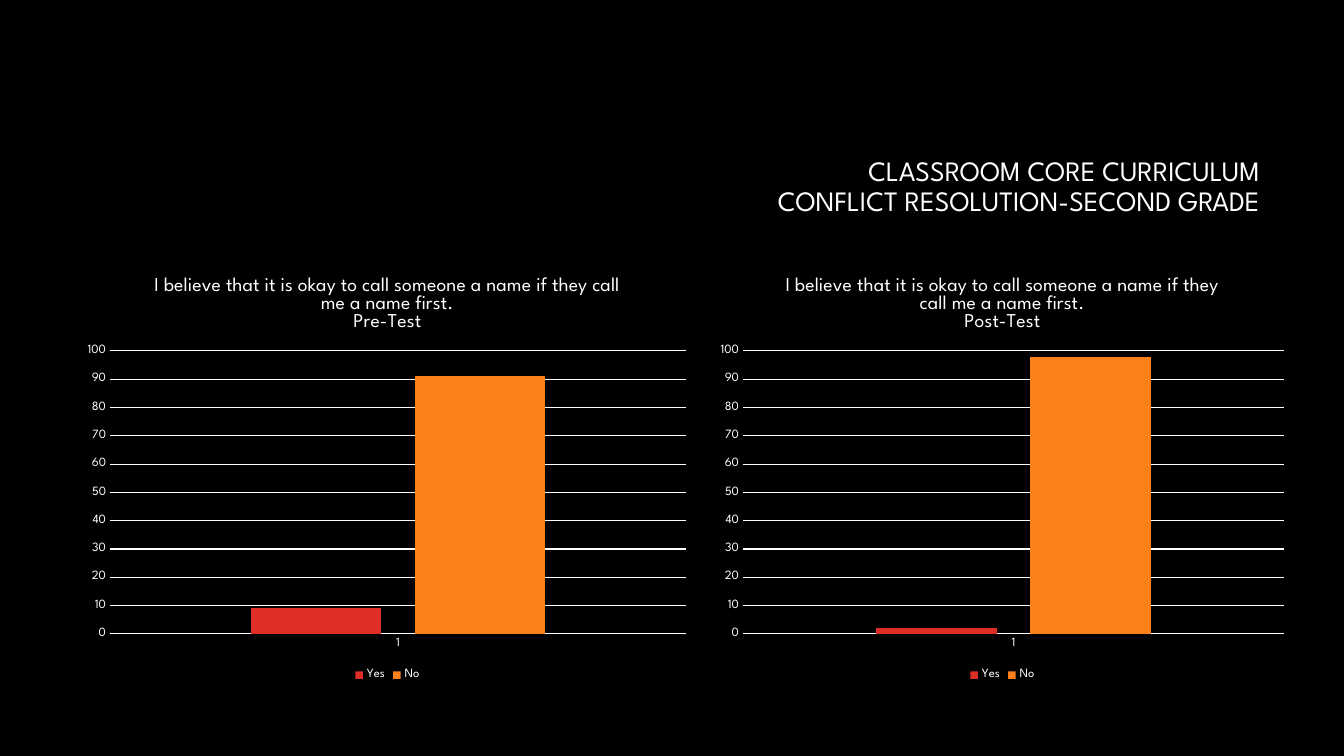
"""Build the conflict resolution slide with its pre-test and post-test charts."""
import pptx
import pptx.chart.data
import pptx.dml.color
import pptx.enum.chart
import pptx.enum.text
import pptx.oxml
import pptx.oxml.ns
import pptx.util

PX = 9071
FONT = "League Spartan"
BLACK = pptx.dml.color.RGBColor(0x00, 0x00, 0x00)
WHITE = pptx.dml.color.RGBColor(0xFF, 0xFF, 0xFF)
RED = pptx.dml.color.RGBColor(0xDF, 0x2E, 0x28)
ORANGE = pptx.dml.color.RGBColor(0xFE, 0x80, 0x1A)
QUESTION = "I believe that it is okay to call someone a name if they call me a name first."
CHART_TOP, CHART_HEIGHT = 259, 426
PLOT_TOP, PLOT_HEIGHT = 351, 283


def style(font, size):
    font.name = FONT
    font.size = pptx.util.Pt(size)
    font.bold = False
    font.color.rgb = WHITE


def place_plot(chart, x, y, w, h):
    area = chart.element.find(".//" + pptx.oxml.ns.qn("c:plotArea"))
    for old in area.findall(pptx.oxml.ns.qn("c:layout")):
        area.remove(old)
    area.insert(0, pptx.oxml.parse_xml(
        f'<c:layout {pptx.oxml.ns.nsdecls("c")}><c:manualLayout>'
        '<c:layoutTarget val="inner"/><c:xMode val="edge"/><c:yMode val="edge"/>'
        f'<c:x val="{x:.4f}"/><c:y val="{y:.4f}"/><c:w val="{w:.4f}"/><c:h val="{h:.4f}"/>'
        '</c:manualLayout></c:layout>'))


prs = pptx.Presentation()
prs.slide_width, prs.slide_height = 1344 * PX, 756 * PX
s = prs.slides.add_slide(prs.slide_layouts[6])
s.background.fill.solid()
s.background.fill.fore_color.rgb = BLACK

tf = s.shapes.add_textbox(320 * PX, 85 * PX, 950 * PX, 142 * PX).text_frame
tf.word_wrap = True
tf.vertical_anchor = pptx.enum.text.MSO_ANCHOR.BOTTOM
tf.margin_bottom = 10 * PX
p = tf.paragraphs[0]
p.text = "CLASSROOM CORE CURRICULUM\vCONFLICT RESOLUTION-SECOND GRADE"
p.alignment = pptx.enum.text.PP_ALIGN.RIGHT
p.line_spacing = pptx.util.Pt(21.4)
style(p.font, 20)

charts = [
    ("Pre-Test", 76, 623, 110, 576, 9, 91),
    ("Post-Test", 709, 587, 743, 541, 2, 98),
]
for test, left, width, plot_left, plot_width, yes, no in charts:
    data = pptx.chart.data.CategoryChartData()
    data.categories = ["1"]
    data.add_series("Yes", [yes])
    data.add_series("No", [no])
    chart = s.shapes.add_chart(
        pptx.enum.chart.XL_CHART_TYPE.COLUMN_CLUSTERED,
        left * PX, CHART_TOP * PX, width * PX, CHART_HEIGHT * PX, data).chart
    style(chart.font, 10)

    chart.has_title = True
    tf = chart.chart_title.text_frame
    tf.text = f"{QUESTION}\n{test}"
    for p in tf.paragraphs:
        style(p.font, 14)

    chart.has_legend = True
    chart.legend.position = pptx.enum.chart.XL_LEGEND_POSITION.BOTTOM
    chart.legend.include_in_layout = False
    style(chart.legend.font, 9)

    for axis in (chart.category_axis, chart.value_axis):
        axis.major_tick_mark = pptx.enum.chart.XL_TICK_MARK.NONE
        style(axis.tick_labels.font, 9)
    values = chart.value_axis
    values.minimum_scale, values.maximum_scale, values.major_unit = 0, 100, 10
    values.format.line.fill.background()
    for line in (chart.category_axis.format.line, values.major_gridlines.format.line):
        line.color.rgb = WHITE
        line.width = pptx.util.Pt(0.75)

    plot = chart.plots[0]
    plot.vary_by_categories = False
    plot.gap_width, plot.overlap = 219, -27
    for series, color in zip(plot.series, (RED, ORANGE)):
        series.format.fill.solid()
        series.format.fill.fore_color.rgb = color
    place_plot(chart, (plot_left - left) / width, (PLOT_TOP - CHART_TOP) / CHART_HEIGHT,
               plot_width / width, PLOT_HEIGHT / CHART_HEIGHT)

prs.save("out.pptx")
